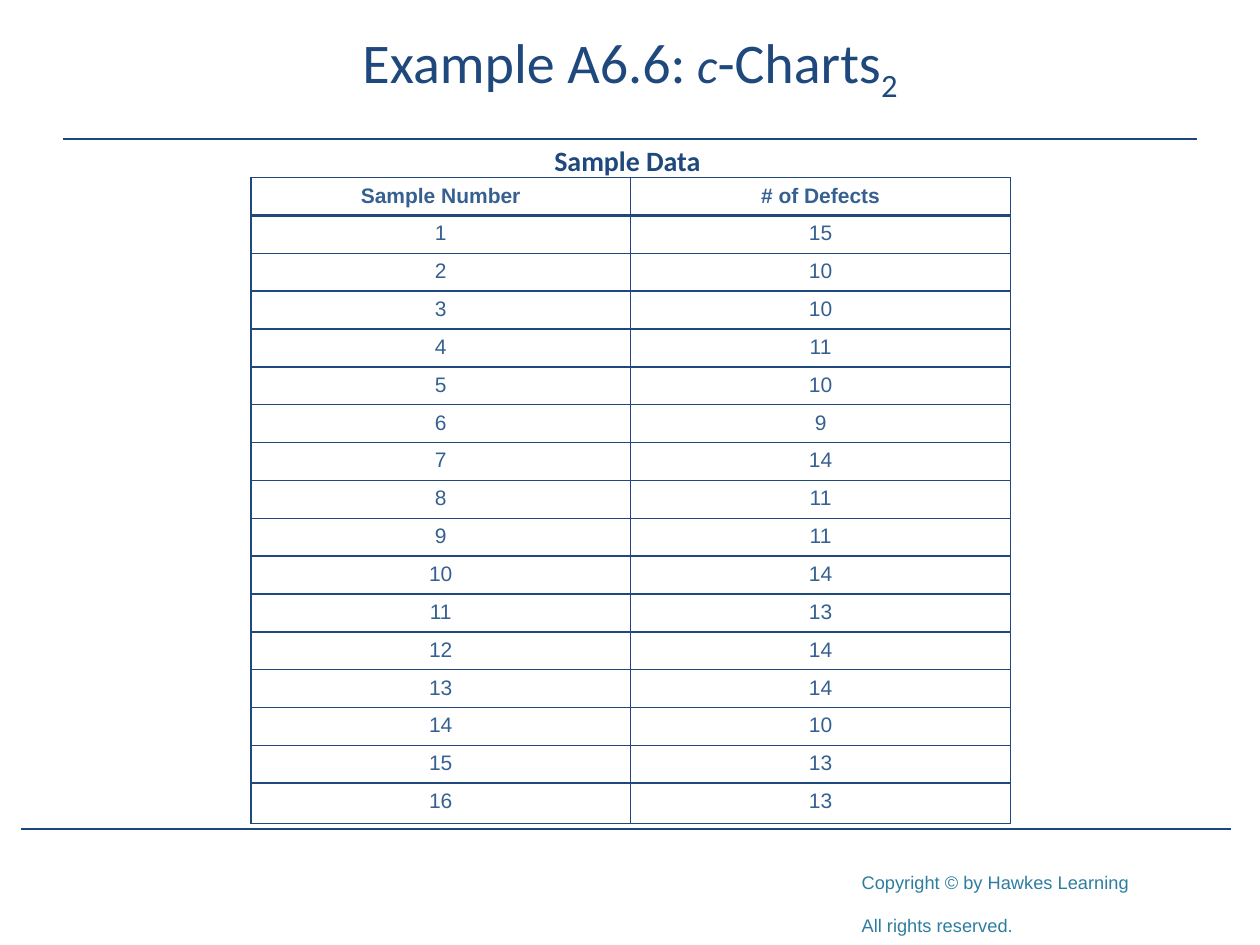
import lxml.etree
import pptx
import pptx.dml.color
import pptx.enum.shapes
import pptx.enum.text
import pptx.oxml.ns
import pptx.util

WIDTH, HEIGHT = 10, 7.5
NAVY, RULE, CELL_TEXT, TEAL = "1F497D", "1C477C", "366092", "2D7D9F"
HEADINGS = ("Sample Number", "# of Defects")
DEFECTS = (15, 10, 10, 11, 10, 9, 14, 11, 11, 14, 13, 14, 14, 10, 13, 13)
ROW_HEIGHT, LAST_ROW_HEIGHT = 0.3, 0.32
CENTER = pptx.enum.text.PP_ALIGN.CENTER


def color(value):
    """Return the colour for a hex string."""
    return pptx.dml.color.RGBColor.from_string(value)


def box(left, top, width, height):
    """Return a box in inches as lengths."""
    return [pptx.util.Inches(value) for value in (left, top, width, height)]


def format_run(run, size, name, fill, bold=False, italic=False, subscript=False):
    """Set the font of one run."""
    run.font.size = pptx.util.Pt(size)
    run.font.name = name
    run.font.color.rgb = color(fill)
    run.font.bold = bold
    run.font.italic = italic
    if subscript:
        run._r.get_or_add_rPr().set("baseline", "-25000")


def add_title(slide):
    """Fill and place the title placeholder."""
    title = slide.shapes.title
    title.left, title.top, title.width, title.height = box(0.05 * WIDTH, 0.12, 0.9 * WIDTH, 1)
    title.text_frame.vertical_anchor = pptx.enum.text.MSO_ANCHOR.MIDDLE
    paragraph = title.text_frame.paragraphs[0]
    paragraph.alignment = CENTER
    paragraph.line_spacing = pptx.util.Pt(30)
    parts = (("Example A6.6:", 32), (" ", 28), ("c", 28), ("-Charts", 32), ("2", 32))
    for text, size in parts:
        run = paragraph.add_run()
        run.text = text
        format_run(run, size, "Calibri", NAVY, italic=text == "c", subscript=text == "2")


def add_rule(slide, left, right, top):
    """Draw a horizontal rule."""
    rule = slide.shapes.add_connector(
        pptx.enum.shapes.MSO_CONNECTOR.STRAIGHT, *box(left, top, right, top))
    rule.line.color.rgb = color(RULE)
    rule.line.width = pptx.util.Pt(1.25)
    lxml.etree.SubElement(rule._element.spPr, pptx.oxml.ns.qn("a:effectLst"))


def add_text(slide, place, lines, alignment, anchor, **font):
    """Add a text box with one paragraph for each line."""
    shape = slide.shapes.add_textbox(*box(*place))
    frame = shape.text_frame
    frame.word_wrap = True
    frame.vertical_anchor = anchor
    frame.text = "\n".join(lines)
    for paragraph in frame.paragraphs:
        paragraph.alignment = alignment
        format_run(paragraph.runs[0], **font)


def set_borders(cell, bottom_width):
    """Draw the four borders of a cell."""
    properties = cell._tc.get_or_add_tcPr()
    widths = {"lnL": 1, "lnR": 1, "lnT": 1, "lnB": bottom_width}
    for index, (tag, width) in enumerate(widths.items()):
        line = lxml.etree.Element(pptx.oxml.ns.qn("a:" + tag), w=str(pptx.util.Pt(width)))
        fill = lxml.etree.SubElement(line, pptx.oxml.ns.qn("a:solidFill"))
        lxml.etree.SubElement(fill, pptx.oxml.ns.qn("a:srgbClr"), val=NAVY)
        properties.insert(index, line)


def add_defect_table(slide):
    """Add the table of defects by sample."""
    rows = [HEADINGS, *enumerate(DEFECTS, start=1)]
    height = ROW_HEIGHT * (len(rows) - 1) + LAST_ROW_HEIGHT
    table = slide.shapes.add_table(
        len(rows), len(HEADINGS), *box(1.99, 1.41, 6.03, height)).table
    for row in table.rows:
        row.height = pptx.util.Inches(ROW_HEIGHT)
    table.rows[len(rows) - 1].height = pptx.util.Inches(LAST_ROW_HEIGHT)
    for row_index, values in enumerate(rows):
        for column_index, value in enumerate(values):
            cell = table.cell(row_index, column_index)
            cell.fill.background()
            cell.text = str(value)
            paragraph = cell.text_frame.paragraphs[0]
            paragraph.alignment = CENTER
            format_run(paragraph.runs[0], 12, "Arial", CELL_TEXT, bold=row_index == 0)
            set_borders(cell, 2 if row_index == 0 else 1)
            if row_index == 1:
                header_line = cell._tc.tcPr.find(pptx.oxml.ns.qn("a:lnT"))
                header_line.set("w", str(pptx.util.Pt(2)))


def main():
    """Build the slide and save it."""
    presentation = pptx.Presentation()
    presentation.slide_width = pptx.util.Inches(WIDTH)
    presentation.slide_height = pptx.util.Inches(HEIGHT)
    slide = presentation.slides.add_slide(presentation.slide_layouts[5])
    anchors = pptx.enum.text.MSO_ANCHOR
    add_text(slide, (6.74, 6.4, 3.08, 1.08),
             ("Copyright © by Hawkes Learning", "All rights reserved."),
             pptx.enum.text.PP_ALIGN.LEFT, anchors.BOTTOM,
             size=18, name="Arial", fill=TEAL, subscript=True)
    add_rule(slide, 0.05 * WIDTH, 0.95 * WIDTH, 1.1)
    add_rule(slide, 0.17, 9.77, 6.58)
    add_title(slide)
    add_text(slide, (2.48, 1.09, 0.5 * WIDTH, 0.37), ("Sample Data",), CENTER, anchors.TOP,
             size=16, name="Calibri", fill=NAVY, bold=True)
    add_defect_table(slide)
    presentation.save("out.pptx")


if __name__ == "__main__":
    main()
